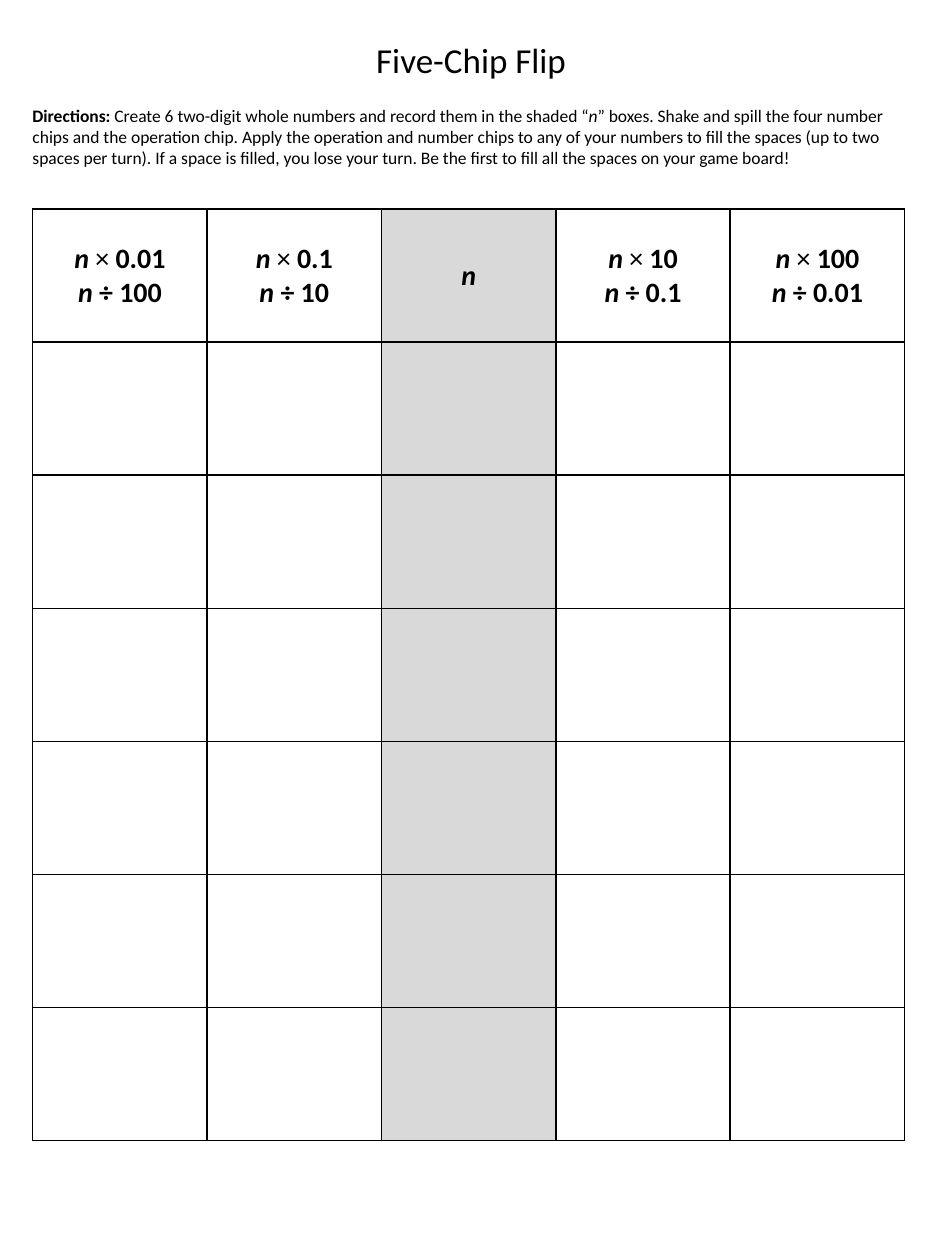
from dataclasses import dataclass

from lxml.etree import SubElement
from pptx import Presentation
from pptx.dml.color import RGBColor
from pptx.enum.shapes import MSO_SHAPE
from pptx.enum.text import MSO_ANCHOR, PP_ALIGN
from pptx.oxml.ns import qn
from pptx.util import Inches, Pt


@dataclass(frozen=True)
class Theme:
    font: str = "Calibri"
    ink: str = "000000"
    paper: str = "FFFFFF"
    shade: str = "D9D9D9"
    title: int = 20
    body: int = 10
    head: int = 16
    rule: int = 1


@dataclass(frozen=True)
class Run:
    text: str
    bold: bool = False
    slant: bool = False


@dataclass(frozen=True)
class Box:
    top: float
    runs: tuple
    size: int
    align: PP_ALIGN


@dataclass(frozen=True)
class Head:
    times: str
    over: str


THEME = Theme()
ROWS, COLS, MID = 7, 5, 2
WIDE, HIGH = 1.384, 1.056

BOXES = (
    Box(0.16, (Run("Five-Chip Flip"),), THEME.title, PP_ALIGN.CENTER),
    Box(0.77, (
        Run("Directions:", bold=True),
        Run(" Create 6 two-digit whole numbers and record them in the shaded “"),
        Run("n", slant=True),
        Run("” boxes. Shake and spill the four number chips and the operation "
            "chip. Apply the operation and number chips to any of your numbers "
            "to fill the spaces (up to two spaces per turn). If a space is "
            "filled, you lose your turn. Be the first to fill all the spaces "
            "on your game board!"),
    ), THEME.body, PP_ALIGN.LEFT),
)

# None marks the column for the starting number
HEADS = (Head("0.01", "100"), Head("0.1", "10"), None,
         Head("10", "0.1"), Head("100", "0.01"))


def color(code: str) -> RGBColor:
    return RGBColor.from_string(code)


def write(frame, lines, *, size: int, align: PP_ALIGN) -> None:
    for i, line in enumerate(lines):
        para = frame.paragraphs[0] if i == 0 else frame.add_paragraph()
        para.alignment = align
        for part in line:
            run = para.add_run()
            run.text = part.text
            font = run.font
            font.name, font.size = THEME.font, Pt(size)
            font.bold, font.italic = part.bold, part.slant
            font.color.rgb = color(THEME.ink)


def add_box(slide, box: Box) -> None:
    shape = slide.shapes.add_shape(MSO_SHAPE.RECTANGLE, Inches(0.16),
                                   Inches(box.top), Inches(7.16), Inches(0.62))
    shape.shadow.inherit = False
    shape.fill.solid()
    shape.fill.fore_color.rgb = color(THEME.paper)
    shape.line.color.rgb = color(THEME.paper)
    shape.line.width = Pt(THEME.rule)
    frame = shape.text_frame
    frame.word_wrap = True
    frame.vertical_anchor = MSO_ANCHOR.MIDDLE
    write(frame, [box.runs], size=box.size, align=box.align)


def edge(cell) -> None:
    props = cell._tc.get_or_add_tcPr()
    for side in ("lnL", "lnR", "lnT", "lnB"):
        line = SubElement(props, qn(f"a:{side}"), w=str(Pt(THEME.rule)))
        fill = SubElement(line, qn("a:solidFill"))
        SubElement(fill, qn("a:srgbClr"), val=THEME.ink)


def rules(head) -> list:
    if head is None:
        return [[Run("n", True, True)]]
    return [
        [Run("n ", True, True), Run("×"), Run(f" {head.times}", True)],
        [Run("n", True, True), Run(f" ÷ {head.over}", True)],
    ]


def add_board(slide) -> None:
    table = slide.shapes.add_table(
        ROWS, COLS, Inches(0.26), Inches(1.66),
        Inches(WIDE * COLS), Inches(HIGH * ROWS)).table
    table.first_row = table.horz_banding = False
    for col in table.columns:
        col.width = Inches(WIDE)
    for row in table.rows:
        row.height = Inches(HIGH)
        for i, cell in enumerate(row.cells):
            cell.vertical_anchor = MSO_ANCHOR.MIDDLE
            edge(cell)
            if i == MID:
                cell.fill.solid()
                cell.fill.fore_color.rgb = color(THEME.shade)
            else:
                cell.fill.background()
    for i, head in enumerate(HEADS):
        write(table.cell(0, i).text_frame, rules(head),
              size=THEME.head, align=PP_ALIGN.CENTER)


def main() -> None:
    deck = Presentation()
    deck.slide_width, deck.slide_height = Inches(7.5), Inches(10)
    slide = deck.slides.add_slide(deck.slide_layouts[6])
    # Title and directions
    for box in BOXES:
        add_box(slide, box)
    # Game board
    add_board(slide)
    deck.save("out.pptx")


if __name__ == "__main__":
    main()
